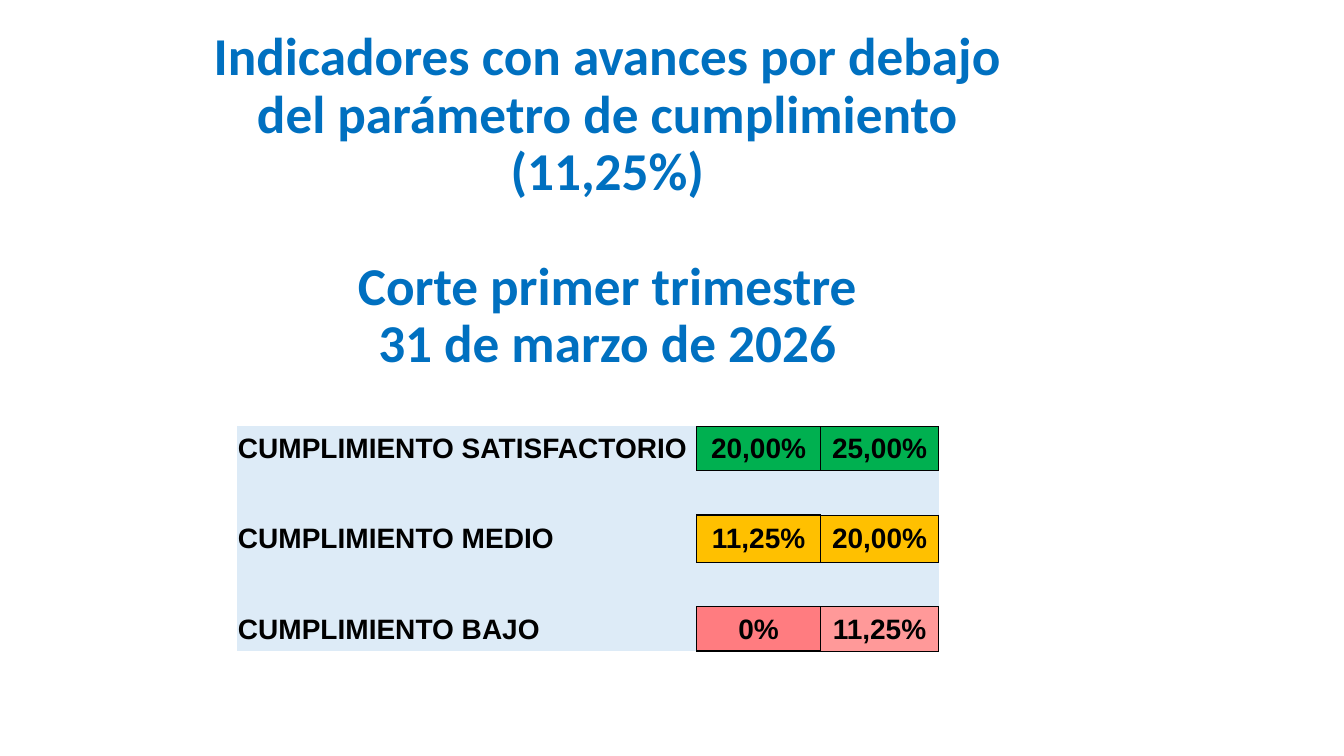
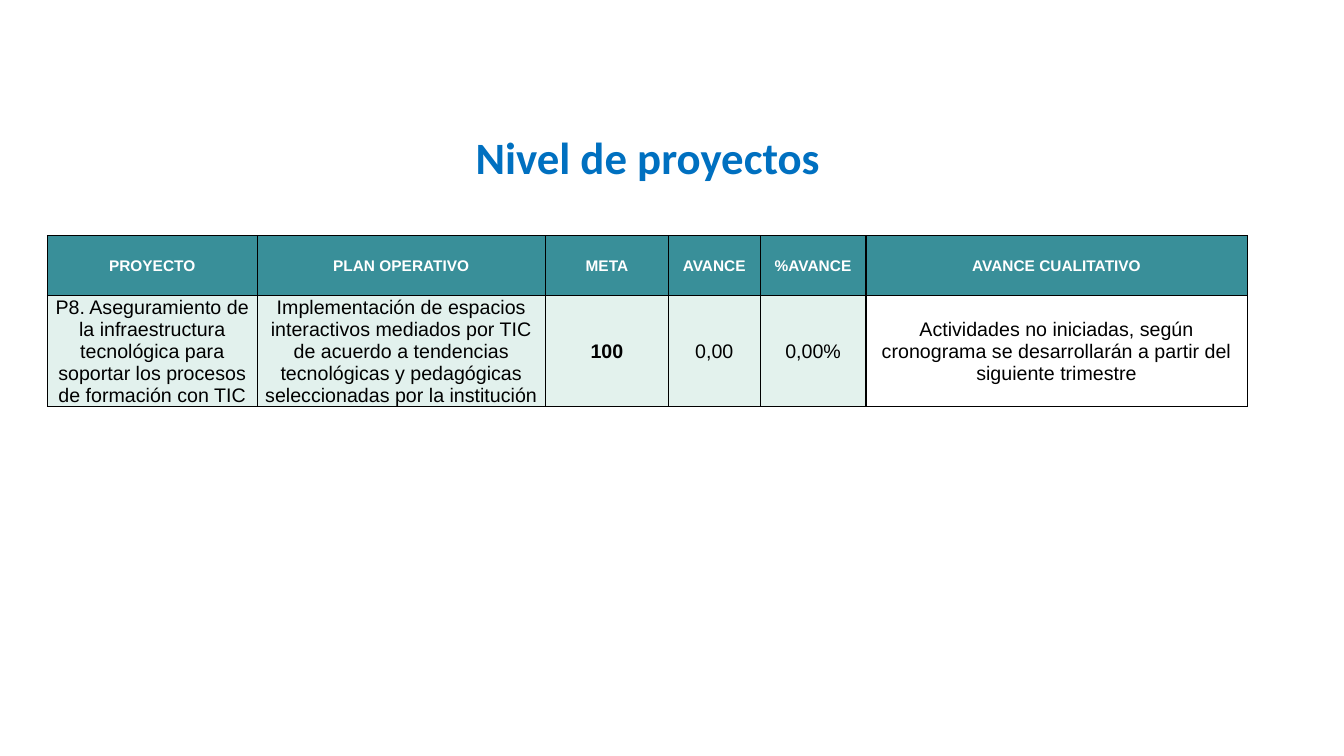
import pptx
import pptx.dml.color
import pptx.enum.text
import pptx.oxml
import pptx.oxml.ns
import pptx.util
from pptx.util import Inches

RGBColor = pptx.dml.color.RGBColor
Pt = pptx.util.Pt
ALIGN = pptx.enum.text.PP_ALIGN
MIDDLE = pptx.enum.text.MSO_ANCHOR.MIDDLE

BLUE = RGBColor(0x00, 0x70, 0xC0)
BLACK = RGBColor(0x00, 0x00, 0x00)
WHITE = RGBColor(0xFF, 0xFF, 0xFF)
PALE_BLUE = RGBColor(0xDD, 0xEB, 0xF7)
GREEN = RGBColor(0x00, 0xB0, 0x50)
AMBER = RGBColor(0xFF, 0xC0, 0x00)
RED = RGBColor(0xFF, 0x7C, 0x80)
PINK = RGBColor(0xFF, 0x99, 0x99)
TEAL = RGBColor(0x39, 0x8F, 0x99)
MINT = RGBColor(0xE2, 0xF1, 0xED)
MINT_LIGHT = RGBColor(0xE3, 0xF2, 0xED)

TITLE_FONT, TABLE_FONT = "Calibri", "Arial"
PLAIN_TABLE_STYLE = "{2D5ABB26-0587-4C30-8999-92F81FD0307C}"
TITLE_ONLY = 5

# Label, columns the label spans, border width of the first value, values and fills
LEVELS = [
    ("CUMPLIMIENTO SATISFACTORIO", 4, 0.5, [("20,00%", GREEN), ("25,00%", GREEN)]),
    ("CUMPLIMIENTO MEDIO", 3, 1, [("11,25%", AMBER), ("20,00%", AMBER)]),
    ("CUMPLIMIENTO BAJO", 3, 1, [("0%", RED), ("11,25%", PINK)]),
]

# Heading, column width, value, fill of the value, bold value
PROJECT = [
    ("PROYECTO", 2.08,
     "P8. Aseguramiento de la infraestructura tecnológica para soportar "
     "los procesos de formación con TIC", MINT, False),
    ("PLAN OPERATIVO", 2.86,
     "Implementación de espacios interactivos mediados por TIC de acuerdo a "
     "tendencias tecnológicas y pedagógicas seleccionadas por la institución", MINT, False),
    ("META", 1.22, "100", MINT_LIGHT, True),
    ("AVANCE", 0.91, "0,00", MINT_LIGHT, False),
    ("%AVANCE", 1.05, "0,00%", MINT_LIGHT, False),
    ("AVANCE CUALITATIVO", 3.78,
     "Actividades no iniciadas, según cronograma se desarrollarán a partir del "
     "siguiente trimestre", WHITE, False),
]


def write(p, text, size, color=BLACK, bold=True, font=TABLE_FONT, align=ALIGN.CENTER):
    p.alignment = align
    r = p.add_run()
    r.text = text
    r.font.name, r.font.size, r.font.bold = font, Pt(size), bold
    r.font.color.rgb = color


def add_title_slide(prs, box, lines, size, gap_before=None):
    """Add a slide with one title line per paragraph and a gap before line gap_before."""
    slide = prs.slides.add_slide(prs.slide_layouts[TITLE_ONLY])
    sp = slide.shapes.title
    sp.left, sp.top, sp.width, sp.height = [Inches(v) for v in box]
    tf = sp.text_frame
    tf.word_wrap = True
    tf.auto_size = pptx.enum.text.MSO_AUTO_SIZE.NONE
    tf.vertical_anchor = MIDDLE
    for i, line in enumerate(lines):
        p = tf.add_paragraph() if i else tf.paragraphs[0]
        p.line_spacing = 0.9
        if i == gap_before:
            p.space_before = Pt(41)
        write(p, line, size, BLUE, font=TITLE_FONT)
    return slide


def add_plain_table(slide, left, top, widths, heights):
    frame = slide.shapes.add_table(len(heights), len(widths), Inches(left), Inches(top),
                                   Inches(sum(widths)), Inches(sum(heights)))
    table = frame.table
    table.first_row = table.horz_banding = False
    table._tbl.tblPr.find(pptx.oxml.ns.qn("a:tableStyleId")).text = PLAIN_TABLE_STYLE
    for column, width in zip(table.columns, widths):
        column.width = Inches(width)
    for row, height in zip(table.rows, heights):
        row.height = Inches(height)
    return table


def style_cell(cell, fill, borders=None):
    """Set insets and fill; borders maps the sides L, R, T and B to widths in points."""
    cell.vertical_anchor = MIDDLE
    cell.margin_left = cell.margin_right = cell.margin_top = Inches(0.01)
    cell.margin_bottom = 0
    for side, width in (borders or {}).items():
        cell._tc.get_or_add_tcPr().append(pptx.oxml.parse_xml(
            f'<a:ln{side} {pptx.oxml.ns.nsdecls("a")} w="{Pt(width)}">'
            f'<a:solidFill><a:srgbClr val="{BLACK}"/></a:solidFill></a:ln{side}>'))
    cell.fill.solid()
    cell.fill.fore_color.rgb = fill


def add_levels_table(slide, left, top):
    table = add_plain_table(slide, left, top, [1.14] * 4 + [1.23, 1.17],
                            [0.44, 0.44, 0.47, 0.44, 0.44])
    level_cells = {}
    for i, (label, span, width, values) in enumerate(LEVELS):
        row = 2 * i
        table.cell(row, 0).merge(table.cell(row, span - 1))
        write(table.cell(row, 0).text_frame.paragraphs[0], label, 20, align=ALIGN.LEFT)
        first = dict.fromkeys("LRTB", width)
        second = {"L": width, "R": 0.5, "T": 0.5, "B": 0.5}
        for col, (value, fill), borders in zip((4, 5), values, (first, second)):
            write(table.cell(row, col).text_frame.paragraphs[0], value, 20)
            level_cells[row, col] = (fill, borders)
    for row in range(len(table.rows)):
        for col in range(len(table.columns)):
            style_cell(table.cell(row, col), *level_cells.get((row, col), (PALE_BLUE,)))


def add_project_table(slide, left, top):
    table = add_plain_table(slide, left, top, [column[1] for column in PROJECT], [0.59, 1.1])
    borders = dict.fromkeys("LRTB", 1)
    for col, (heading, _, value, fill, bold) in enumerate(PROJECT):
        head, body = table.cell(0, col), table.cell(1, col)
        style_cell(head, TEAL, borders)
        write(head.text_frame.paragraphs[0], heading, 11, WHITE)
        style_cell(body, fill, borders)
        write(body.text_frame.paragraphs[0], value, 14, bold=bold)


def main():
    prs = pptx.Presentation()
    prs.slide_width, prs.slide_height = Inches(13.33), Inches(7.5)

    slide = add_title_slide(
        prs, (1.69, 1.06, 8.67, 1.89),
        ["Indicadores con avances por debajo del parámetro de cumplimiento (11,25%)",
         "Corte primer trimestre", "31 de marzo de 2026"], 38, gap_before=1)
    add_levels_table(slide, 2.35, 4.23)

    slide = add_title_slide(prs, (1.64, 1.23, 9.57, 0.71), ["Nivel de proyectos"], 32)
    add_project_table(slide, 0.47, 2.34)

    prs.save("out.pptx")


if __name__ == "__main__":
    main()
